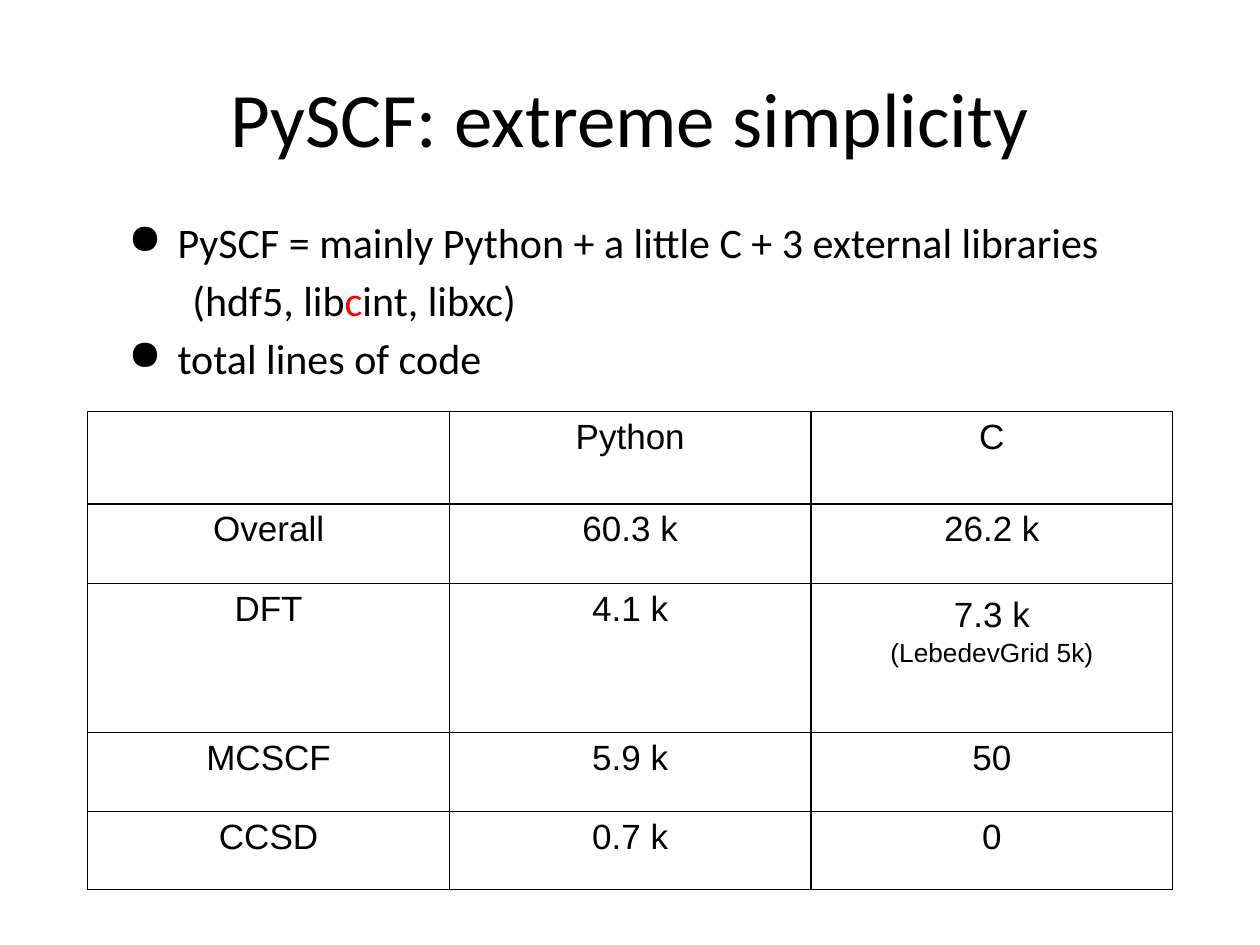
from lxml import etree
from pptx import Presentation
from pptx.dml.color import RGBColor
from pptx.enum.text import MSO_ANCHOR, PP_ALIGN
from pptx.oxml.ns import qn
from pptx.util import Cm, Pt

CENTER, LEFT = PP_ALIGN.CENTER, PP_ALIGN.LEFT
TOP, MIDDLE = MSO_ANCHOR.TOP, MSO_ANCHOR.MIDDLE

THEME = {
    "heading_font": "Calibri",
    "table_font": "Arial",
    "ink": "000000",
    "accent": "FF0000",
    "title_size": 44,
    "body_size": 24,
    "cell_size": 20,
    "note_size": 15,
    "border_width": 0.75,
}

TITLE = "PySCF: extreme simplicity"
POINTS = [
    {"runs": ["PySCF = mainly Python + a little C + 3 external libraries"], "bullet": "●"},
    {"runs": ["(hdf5, lib", ("c", THEME["accent"]), "int, libxc)"], "bullet": None},
    {"runs": ["total lines of code"], "bullet": "●"},
]
CODE_LINES = [
    ["", "Python", "C"],
    ["Overall", "60.3 k", "26.2 k"],
    ["DFT", "4.1 k", ("7.3 k", "(LebedevGrid 5k)")],
    ["MCSCF", "5.9 k", "50"],
    ["CCSD", "0.7 k", "0"],
]
ROW_HEIGHTS = [1.86, 1.6, 3.0, 1.6, 1.57]
COLUMN_WIDTH = 7.29
BULLET_INDENT = (1.27, -0.99)
PLAIN_INDENT = (1.57, 0)


def write(paragraph, runs, *, size, font, align=LEFT, spacing=None, indent=None, bullet=None):
    properties = paragraph._p.get_or_add_pPr()
    if indent:
        properties.set("marL", str(Cm(indent[0])))
        properties.set("indent", str(Cm(indent[1])))
    if bullet:
        etree.SubElement(properties, qn("a:buChar")).set("char", bullet)
    paragraph.alignment = align
    if spacing:
        paragraph.line_spacing = spacing
    paragraph.font.size = Pt(size)
    paragraph.font.name = font
    for item in runs:
        text, color = item if isinstance(item, tuple) else (item, THEME["ink"])
        run = paragraph.add_run()
        run.text = text
        run.font.size = Pt(size)
        run.font.name = font
        run.font.color.rgb = RGBColor.from_string(color)


def paragraph_at(frame, index):
    return frame.paragraphs[0] if index == 0 else frame.add_paragraph()


def add_text_frame(slide, left, top, width, height, anchor, inset):
    box = slide.shapes.add_textbox(Cm(left), Cm(top), Cm(width), Cm(height))
    frame = box.text_frame
    frame.word_wrap = True
    frame.vertical_anchor = anchor
    frame.margin_top = frame.margin_bottom = Cm(inset)
    return frame


def add_borders(cell):
    properties = cell._tc.get_or_add_tcPr()
    for side in ("a:lnL", "a:lnR", "a:lnT", "a:lnB"):
        line = etree.SubElement(properties, qn(side), w=str(Pt(THEME["border_width"])))
        fill = etree.SubElement(line, qn("a:solidFill"))
        etree.SubElement(fill, qn("a:srgbClr"), val=THEME["ink"])


def add_title(slide):
    frame = add_text_frame(slide, 1.27, 0.76, 22.86, 3.18, MIDDLE, 0.13)
    write(frame.paragraphs[0], [TITLE], size=THEME["title_size"],
          font=THEME["heading_font"], align=CENTER)


def add_points(slide):
    frame = add_text_frame(slide, 2.06, 3.96, 20.83, 4.04, TOP, 0.25)
    for index, point in enumerate(POINTS):
        write(paragraph_at(frame, index), point["runs"], size=THEME["body_size"],
              font=THEME["heading_font"], spacing=1.15, bullet=point["bullet"],
              indent=BULLET_INDENT if point["bullet"] else PLAIN_INDENT)


def add_code_table(slide):
    column_count = len(CODE_LINES[0])
    table = slide.shapes.add_table(
        len(CODE_LINES), column_count, Cm(1.77), Cm(8.3),
        Cm(COLUMN_WIDTH * column_count), Cm(sum(ROW_HEIGHTS))).table
    table.first_row = table.horz_banding = False
    for column in table.columns:
        column.width = Cm(COLUMN_WIDTH)
    for row, height, values in zip(table.rows, ROW_HEIGHTS, CODE_LINES):
        row.height = Cm(height)
        for cell, value in zip(row.cells, values):
            add_borders(cell)
            cell.fill.background()
            has_note = isinstance(value, tuple)
            for index, line in enumerate(value if has_note else [value]):
                write(paragraph_at(cell.text_frame, index), [line] if line else [],
                      size=THEME["note_size"] if index else THEME["cell_size"],
                      font=THEME["table_font"], align=CENTER,
                      spacing=1.15 if has_note else None)


def main():
    presentation = Presentation()
    presentation.slide_width = Cm(25.4)
    presentation.slide_height = Cm(19.05)
    slide = presentation.slides.add_slide(presentation.slide_layouts[6])
    add_title(slide)
    add_code_table(slide)
    add_points(slide)
    presentation.save("out.pptx")


if __name__ == "__main__":
    main()
